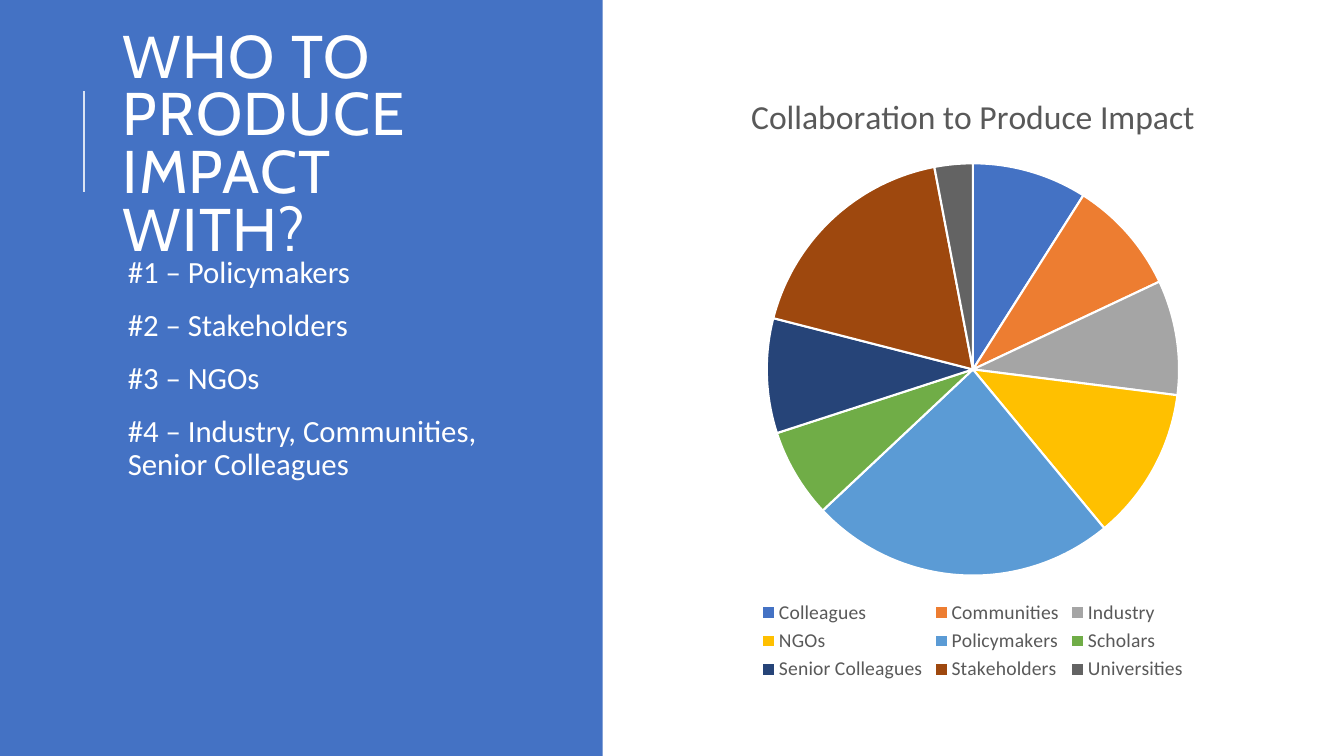
"""Build the slide on who to produce impact with."""
from dataclasses import dataclass

from lxml.etree import SubElement
from pptx import Presentation
from pptx.chart.data import CategoryChartData as ChartData
from pptx.dml.color import RGBColor as Rgb
from pptx.enum.chart import XL_CHART_TYPE as Kind, XL_LEGEND_POSITION as Side
from pptx.enum.shapes import MSO_CONNECTOR as Wire, MSO_SHAPE as Form
from pptx.enum.text import MSO_ANCHOR as Anchor, MSO_AUTO_SIZE as Fit, PP_ALIGN as Align
from pptx.oxml.ns import qn
from pptx.util import Cm, Pt

TITLE = "WHO TO PRODUCE IMPACT WITH?"
RANKS = [
    "#1 – Policymakers",
    "#2 – Stakeholders",
    "#3 – NGOs",
    "#4 – Industry, Communities, Senior Colleagues",
]
HEAD = "Collaboration to Produce Impact"
SHARES = [
    ("Colleagues", 9, "4472C4"),
    ("Communities", 9, "ED7D31"),
    ("Industry", 9, "A5A5A5"),
    ("NGOs", 12, "FFC000"),
    ("Policymakers", 24, "5B9BD5"),
    ("Scholars", 7, "70AD47"),
    ("Senior Colleagues", 9, "264478"),
    ("Stakeholders", 18, "9E480E"),
    ("Universities", 3, "636363"),
]


@dataclass(frozen=True)
class Theme:
    """Colours, fonts and type sizes."""
    panel: str = "4472C4"
    light: str = "FFFFFF"
    rule: str = "DAE3F3"
    grey: str = "595959"
    display: str = "Cabin"
    text: str = "Calibri"
    title: int = 43
    body: int = 22
    head: int = 24
    legend: int = 14


LOOK = Theme()


def style(font, face, size, color):
    """Set the face, size and colour of a font."""
    font.name, font.size, font.bold = face, Pt(size), False
    font.color.rgb = Rgb.from_string(color)


def place(shape, left, top, width, height):
    """Move a shape to a box given in centimetres."""
    shape.left, shape.top = Cm(left), Cm(top)
    shape.width, shape.height = Cm(width), Cm(height)


def write(frame, lines, face, size, color, anchor=Anchor.TOP, inset=None,
          leading=1.0, before=0, after=0, track=0, bullet=None):
    """Fill a text frame with formatted paragraphs."""
    frame.word_wrap, frame.auto_size = True, Fit.NONE
    frame.vertical_anchor = anchor
    if inset is not None:
        frame.margin_left = frame.margin_right = Cm(inset)
        frame.margin_top = frame.margin_bottom = Cm(inset)
    for i, line in enumerate(lines):
        para = frame.add_paragraph() if i else frame.paragraphs[0]
        para.alignment, para.line_spacing = Align.LEFT, leading
        para.space_before, para.space_after = Pt(before), Pt(after)
        run = para.add_run()
        run.text = line
        style(run.font, face, size, color)
        if track:
            run.font._element.set("spc", str(track * 100))
        if bullet:
            props = para._p.get_or_add_pPr()
            props.set("marL", str(Cm(0.25)))
            props.set("indent", str(-Cm(0.25)))
            tint = SubElement(props, qn("a:buClr"))
            SubElement(tint, qn("a:srgbClr")).set("val", LOOK.panel)
            SubElement(props, qn("a:buChar")).set("char", bullet)


def add_panel(slide, height):
    """Lay the coloured panel and its thin rule behind the text."""
    panel = slide.shapes.add_shape(Form.RECTANGLE, 0, 0, Cm(15.19), height)
    panel.shadow.inherit = False
    panel.fill.solid()
    panel.fill.fore_color.rgb = Rgb.from_string(LOOK.panel)
    panel.line.fill.background()
    slide.shapes.element.insert(2, panel.element)
    rule = slide.shapes.add_connector(
        Wire.STRAIGHT, Cm(2.11), Cm(4.83), Cm(2.11), Cm(2.29))
    rule.line.color.rgb = Rgb.from_string(LOOK.rule)
    rule.line.width = Pt(1.5)
    SubElement(rule.element.spPr, qn("a:effectLst"))


def add_pie(slide):
    """Add the pie of shares with its title and legend."""
    data = ChartData()
    data.categories = [name for name, _, _ in SHARES]
    data.add_series("Series 1", [share for _, share, _ in SHARES])
    chart = slide.shapes.add_chart(
        Kind.PIE, Cm(16.94), Cm(1.78), Cm(15.16), Cm(15.49), data).chart
    style(chart.font, LOOK.text, LOOK.legend, LOOK.grey)
    chart.has_title = True
    write(chart.chart_title.text_frame, [HEAD], LOOK.text, LOOK.head, LOOK.grey)
    chart.chart_title.text_frame.paragraphs[0].alignment = Align.CENTER
    chart.chart_title.include_in_layout = False
    chart.has_legend = True
    chart.legend.position, chart.legend.include_in_layout = Side.BOTTOM, False
    style(chart.legend.font, LOOK.text, LOOK.legend, LOOK.grey)
    plot = chart.plots[0]
    plot.vary_by_categories = True
    for i, (_, _, color) in enumerate(SHARES):
        wedge = plot.series[0].points[i].format
        wedge.fill.solid()
        wedge.fill.fore_color.rgb = Rgb.from_string(color)
        wedge.line.color.rgb = Rgb.from_string(LOOK.light)
        wedge.line.width = Pt(1.5)


def main():
    """Build and save the slide."""
    deck = Presentation()
    deck.slide_width, deck.slide_height = Cm(33.87), Cm(19.05)
    slide = deck.slides.add_slide(deck.slide_layouts[1])
    title, body = slide.placeholders
    place(title, 2.84, 1.63, 10.49, 4.17)
    write(title.text_frame, [TITLE], LOOK.display, LOOK.title, LOOK.light,
          anchor=Anchor.MIDDLE, leading=0.8, track=1)
    place(body, 2.84, 6.35, 10.54, 10.92)
    write(body.text_frame, RANKS, LOOK.text, LOOK.body, LOOK.light,
          inset=0.13, leading=0.9, before=12, after=2, bullet=" ")
    add_panel(slide, deck.slide_height)
    add_pie(slide)
    deck.save("out.pptx")


if __name__ == "__main__":
    main()
